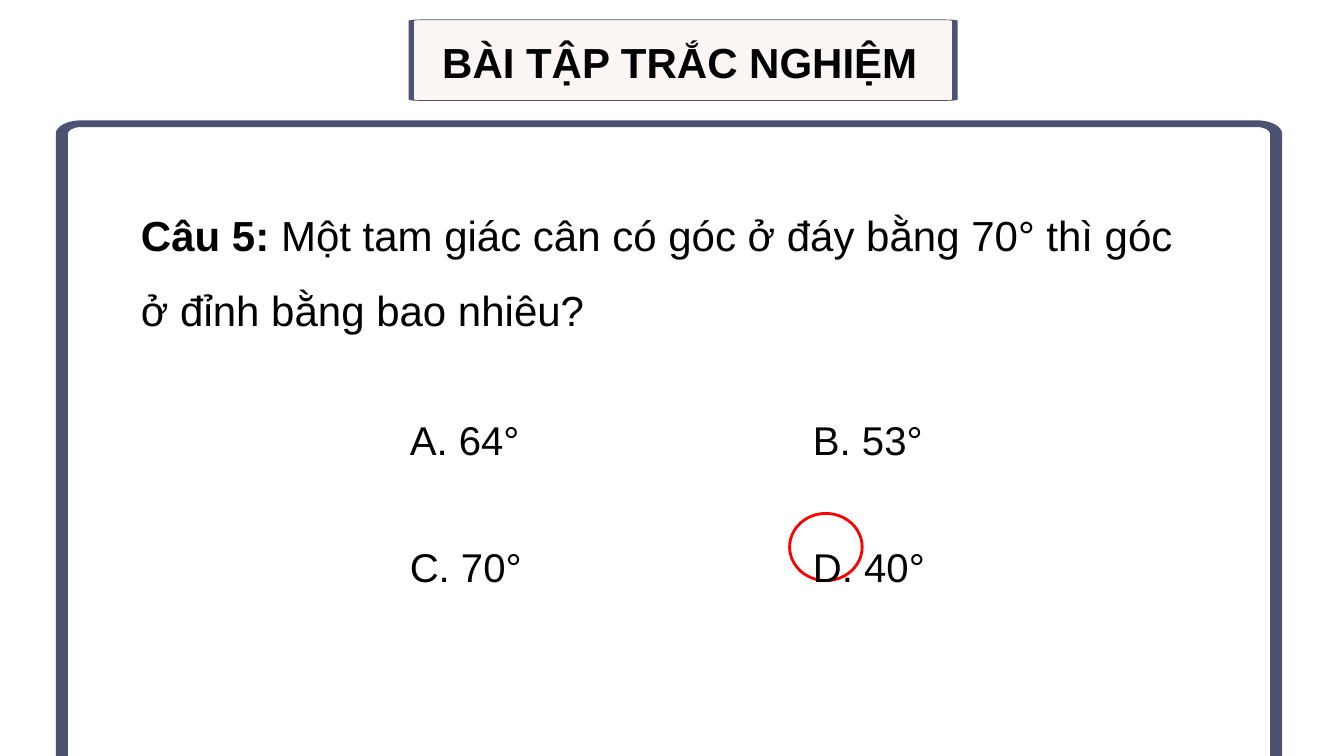
from pptx import Presentation, util as u
from pptx.dml.color import RGBColor
from pptx.enum import shapes, text
from pptx.oxml.ns import qn
from lxml import etree

# Content
TITLE = "BÀI TẬP TRẮC NGHIỆM"
QUESTION = [("Câu 5: ", True),
            ("Một tam giác cân có góc ở đáy bằng 70° thì góc ở đỉnh bằng bao nhiêu?", False)]
ANSWERS = [("A. 64°", "B. 53°"), ("C. 70°", "D. 40°")]

COLORS = {"frame": "4C5270", "banner": "FBF6F3", "text": "000000", "mark": "FF0000"}
FONT = "Arial"
WIDTH, HEIGHT = 20, 11.25
ANSWER_COLUMN = 0.3 * WIDTH
BEND = 0.45  # distance of a curve's control point from the corner, as a share of the radius

# Outlines: left, top, width, height, corner radius across, corner radius down
FRAME = [(0.83, 1.79, 18.25, 9.75, 0.38, 0.2), (1.01, 1.89, 17.89, 9.56, 0.2, 0.1)]
BANNER = [(6.11, 0.3, 8.14, 1.2, 0.13, 0.01)]
BANNER_EDGE = [(6.08, 0.29, 8.17, 1.21, 0.17, 0.02), (6.16, 0.3, 8.01, 1.19, 0.09, 0.01)]


def color(name):
    return RGBColor.from_string(COLORS[name])


def rounded_outline(left, top, width, height, across, down):
    """Four points for each corner, clockwise: start, two controls, end."""
    right, bottom = left + width, top + height
    corners = [(right, bottom, -1, -1), (left, bottom, 1, -1),
               (left, top, 1, 1), (right, top, -1, 1)]
    points = []
    for number, (x, y, inward_x, inward_y) in enumerate(corners):
        dx, dy = across * inward_x, down * inward_y
        curve = [(x, y + dy), (x, y + dy * BEND), (x + dx * BEND, y), (x + dx, y)]
        points += curve if number % 2 == 0 else curve[::-1]
    return [(u.Inches(x), u.Inches(y)) for x, y in points]


def curve_corners(shape):
    """Turn each corner's three line segments into one Bézier curve."""
    for contour in shape._element.iter(qn("a:path")):
        position = 0
        for step in list(contour):
            if step.tag == qn("a:moveTo"):
                position = 0
            elif step.tag == qn("a:lnTo"):
                position += 1
                if position % 4 == 1:
                    curve = etree.Element(qn("a:cubicBezTo"))
                    step.addprevious(curve)
                if position % 4:
                    curve.append(step[0])
                    contour.remove(step)


def add_outline(page, outlines, fill):
    """Fill the first outline; a second one is cut out as a hole."""
    builder = None
    for number, outline in enumerate(outlines):
        points = rounded_outline(*outline)
        if number == 0:
            builder = page.shapes.build_freeform(*points[0])
        else:
            points.reverse()
            builder.move_to(*points[0])
        builder.add_line_segments(points[1:], close=True)
    shape = builder.convert_to_shape()
    curve_corners(shape)
    shape.shadow.inherit = False
    shape.fill.solid()
    shape.fill.fore_color.rgb = color(fill)
    shape.line.fill.background()


def place(shape, left, top, width, height):
    shape.left, shape.top = u.Inches(left), u.Inches(top)
    shape.width, shape.height = u.Inches(width), u.Inches(height)
    frame = shape.text_frame
    frame.word_wrap = True
    frame.auto_size = text.MSO_AUTO_SIZE.SHAPE_TO_FIT_TEXT
    frame.vertical_anchor = text.MSO_ANCHOR.TOP
    return frame


def style(para, size, bold=None):
    para.alignment = text.PP_ALIGN.LEFT
    font = para.font
    font.name, font.size, font.bold = FONT, u.Pt(size), bold
    font.color.rgb = color("text")


deck = Presentation()
deck.slide_width, deck.slide_height = u.Inches(WIDTH), u.Inches(HEIGHT)
page = deck.slides.add_slide(deck.slide_layouts[5])

# Frame and title banner
add_outline(page, FRAME, "frame")
add_outline(page, BANNER, "banner")
add_outline(page, BANNER_EDGE, "frame")

title = page.shapes.title
page.shapes._spTree.append(title._element)
para = place(title, 6.48, 0.49, 7.85, 0.86).paragraphs[0]
para.text = TITLE
style(para, 45, True)

# Ring around the right answer
ring = page.shapes.add_shape(shapes.MSO_SHAPE.OVAL, u.Inches(11.75), u.Inches(7.64),
                             u.Inches(1.08), u.Inches(1))
ring.shadow.inherit = False
ring.fill.background()
ring.line.color.rgb = color("mark")
ring.line.width = u.Pt(3)

# Question
box = page.shapes.add_textbox(0, 0, 0, 0)
para = place(box, 2, 2.69, 15.96, 2.37).paragraphs[0]
para.line_spacing = 1.5
for words, bold in QUESTION:
    span = para.add_run()
    span.text, span.font.bold = words, bold
style(para, 45)

# Answers, in two columns set by a tab stop
box = page.shapes.add_textbox(0, 0, 0, 0)
frame = place(box, 6, 5.05, 10, 3.58)
for row, answers in enumerate(ANSWERS):
    para = frame.add_paragraph() if row else frame.paragraphs[0]
    para.text = "\t".join(answers)
    para.line_spacing, para.space_after = 2.5, u.Pt(8)
    stops = etree.SubElement(para._p.get_or_add_pPr(), qn("a:tabLst"))
    etree.SubElement(stops, qn("a:tab"), pos=str(u.Inches(ANSWER_COLUMN)), algn="l")
    style(para, 43)

deck.save("out.pptx")
